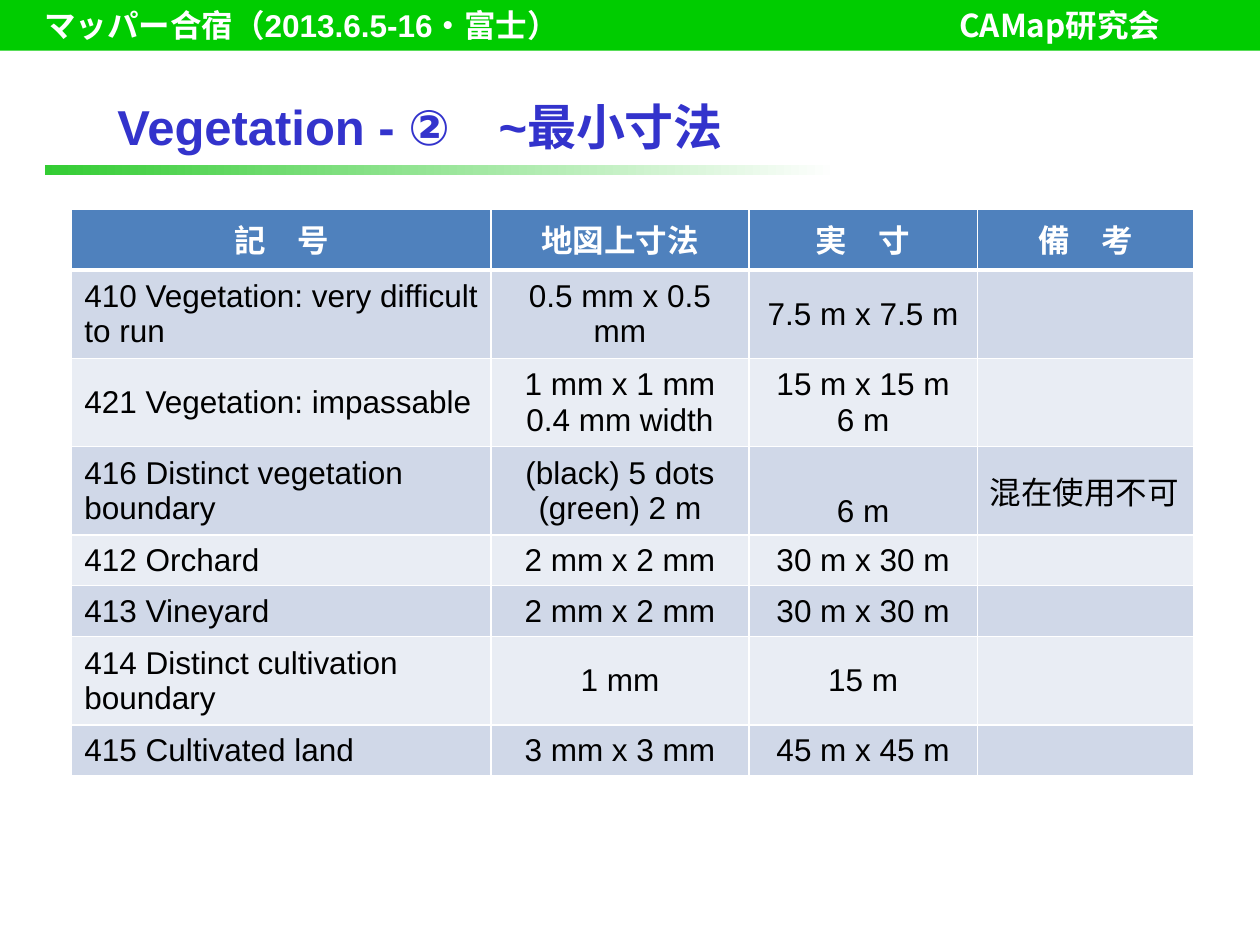
from dataclasses import dataclass

from lxml.etree import SubElement
from pptx import Presentation
from pptx.dml.color import RGBColor
from pptx.enum.shapes import MSO_SHAPE
from pptx.enum.text import MSO_ANCHOR, PP_ALIGN
from pptx.oxml.ns import qn
from pptx.util import Pt


@dataclass(frozen=True)
class Theme:
    latin: str = "Arial"
    heading: str = "Calibri"
    japanese: str = "Noto Sans CJK JP"
    title_size: int = 28
    body_size: int = 18
    white: str = "FFFFFF"
    black: str = "000000"
    title: str = "3333CC"
    banner: str = "00CC00"
    rule: str = "33CC33"
    header: str = "4F81BD"
    bands: tuple = ("D0D8E8", "E9EDF4")


THEME = Theme()

HEADINGS = ("記　号", "地図上寸法", "実　寸", "備　考")
COLUMN_WIDTHS = (239.5, 147.5, 130.5, 123.5)
HEADER_HEIGHT, SINGLE_HEIGHT, DOUBLE_HEIGHT = 34.5, 29, 50.5
# Symbol, size on the map, size on the ground, remark, row height
SYMBOLS = (
    ("410 Vegetation: very difficult to run", "0.5 mm x 0.5 mm", "7.5 m x 7.5 m", "", DOUBLE_HEIGHT),
    ("421 Vegetation: impassable", "1 mm x 1 mm\n0.4 mm width", "15 m x 15 m\n6 m", "", DOUBLE_HEIGHT),
    ("416 Distinct vegetation boundary", "(black) 5 dots\n(green) 2 m", "6 m", "混在使用不可", DOUBLE_HEIGHT),
    ("412 Orchard", "2 mm x 2 mm", "30 m x 30 m", "", SINGLE_HEIGHT),
    ("413 Vineyard", "2 mm x 2 mm", "30 m x 30 m", "", SINGLE_HEIGHT),
    ("414 Distinct cultivation boundary", "1 mm", "15 m", "", DOUBLE_HEIGHT),
    ("415 Cultivated land", "3 mm x 3 mm", "45 m x 45 m", "", SINGLE_HEIGHT),
)
BODY_ALIGNMENT = (PP_ALIGN.LEFT, PP_ALIGN.CENTER, PP_ALIGN.CENTER, PP_ALIGN.LEFT)
# Ground size that lines up with the second line of its map size
BOTTOM_CELL = (3, 2)


def rgb(code):
    return RGBColor.from_string(code)


def add_run(paragraph, text, color, size=THEME.body_size, face=THEME.latin, bold=False):
    run = paragraph.add_run()
    run.text = text
    font = run.font
    font.name, font.size, font.bold = face, Pt(size), bold
    font.color.rgb = rgb(color)
    SubElement(run._r.get_or_add_rPr(), qn("a:ea"), typeface=THEME.japanese)


def add_bar(slide, left, top, width, height):
    bar = slide.shapes.add_shape(
        MSO_SHAPE.RECTANGLE, Pt(left), Pt(top), Pt(width), Pt(height))
    bar.shadow.inherit = False
    bar.line.fill.background()
    return bar


def add_banner(slide, left, top, width, height):
    """Event on the left and group name at a tab stop, on one line."""
    banner = add_bar(slide, left, top, width, height)
    banner.fill.solid()
    banner.fill.fore_color.rgb = rgb(THEME.banner)
    frame = banner.text_frame
    frame.word_wrap = True
    frame.vertical_anchor = MSO_ANCHOR.MIDDLE
    frame.margin_left = Pt(25.2)
    frame.margin_top = frame.margin_bottom = 0
    line = frame.paragraphs[0]
    line.alignment = PP_ALIGN.LEFT
    tabs = SubElement(line._p.get_or_add_pPr(), qn("a:tabLst"))
    SubElement(tabs, qn("a:tab"), pos=str(Pt(523)), algn="l")
    for text, face in (("マッパー合宿（", THEME.japanese),
                       ("2013.6.5-16", THEME.latin),
                       ("・富士）\tCAMap研究会", THEME.japanese)):
        add_run(line, text, THEME.white, face=face, bold=True)


def add_title(slide, left, top, width, height):
    """Slide title with a fading rule under it."""
    title = slide.shapes.add_textbox(Pt(left), Pt(top), Pt(width), Pt(height))
    frame = title.text_frame
    frame.word_wrap = True
    frame.vertical_anchor = MSO_ANCHOR.MIDDLE
    add_run(frame.paragraphs[0], "Vegetation - ②　~最小寸法", THEME.title,
            THEME.title_size, bold=True)

    rule = add_bar(slide, left - 34.5, top + height - 5.5, 453.5, 5.5)
    rule.fill.gradient()
    rule.fill.gradient_angle = 0
    for stop, color, position in zip(
            rule.fill.gradient_stops, (THEME.rule, THEME.white), (0, 1)):
        stop.color.rgb = rgb(color)
        stop.position = position


def style_cell(cell, fill, bottom_width=1, top_width=1):
    """White borders first, then the fill, as the schema orders them."""
    properties = cell._tc.get_or_add_tcPr()
    for side, width in (("lnL", 1), ("lnR", 1), ("lnT", top_width), ("lnB", bottom_width)):
        border = SubElement(properties, qn(f"a:{side}"), w=str(Pt(width)))
        SubElement(SubElement(border, qn("a:solidFill")), qn("a:srgbClr"), val=THEME.white)
    cell.fill.solid()
    cell.fill.fore_color.rgb = rgb(fill)


def write_cell(cell, text, alignment, color, face=THEME.latin, bold=False):
    frame = cell.text_frame
    for index, line in enumerate(text.split("\n")):
        paragraph = frame.add_paragraph() if index else frame.paragraphs[0]
        paragraph.alignment = alignment
        if line:
            add_run(paragraph, line, color, face=face, bold=bold)
        else:
            paragraph.font.size = Pt(THEME.body_size)


def add_symbol_table(slide, left, top):
    heights = (HEADER_HEIGHT, *(symbol[-1] for symbol in SYMBOLS))
    table = slide.shapes.add_table(
        len(heights), len(HEADINGS), Pt(left), Pt(top),
        Pt(sum(COLUMN_WIDTHS)), Pt(sum(heights))).table
    for column, width in zip(table.columns, COLUMN_WIDTHS):
        column.width = Pt(width)
    for row, height in zip(table.rows, heights):
        row.height = Pt(height)

    for column, heading in enumerate(HEADINGS):
        cell = table.cell(0, column)
        style_cell(cell, THEME.header, bottom_width=3)
        write_cell(cell, heading, PP_ALIGN.CENTER, THEME.white, THEME.heading, True)

    for row, (*values, _) in enumerate(SYMBOLS, start=1):
        for column, value in enumerate(values):
            cell = table.cell(row, column)
            style_cell(cell, THEME.bands[(row - 1) % 2], top_width=3 if row == 1 else 1)
            cell.vertical_anchor = (
                MSO_ANCHOR.BOTTOM if (row, column) == BOTTOM_CELL else MSO_ANCHOR.MIDDLE)
            write_cell(cell, value, BODY_ALIGNMENT[column], THEME.black)


def main():
    presentation = Presentation()
    presentation.slide_width, presentation.slide_height = Pt(720), Pt(540)
    slide = presentation.slides.add_slide(presentation.slide_layouts[6])
    add_title(slide, 60, 43.5, 566.5, 56.5)
    add_banner(slide, 0, 0, 720, 29)
    add_symbol_table(slide, 41, 119.75)
    presentation.save("out.pptx")


if __name__ == "__main__":
    main()
